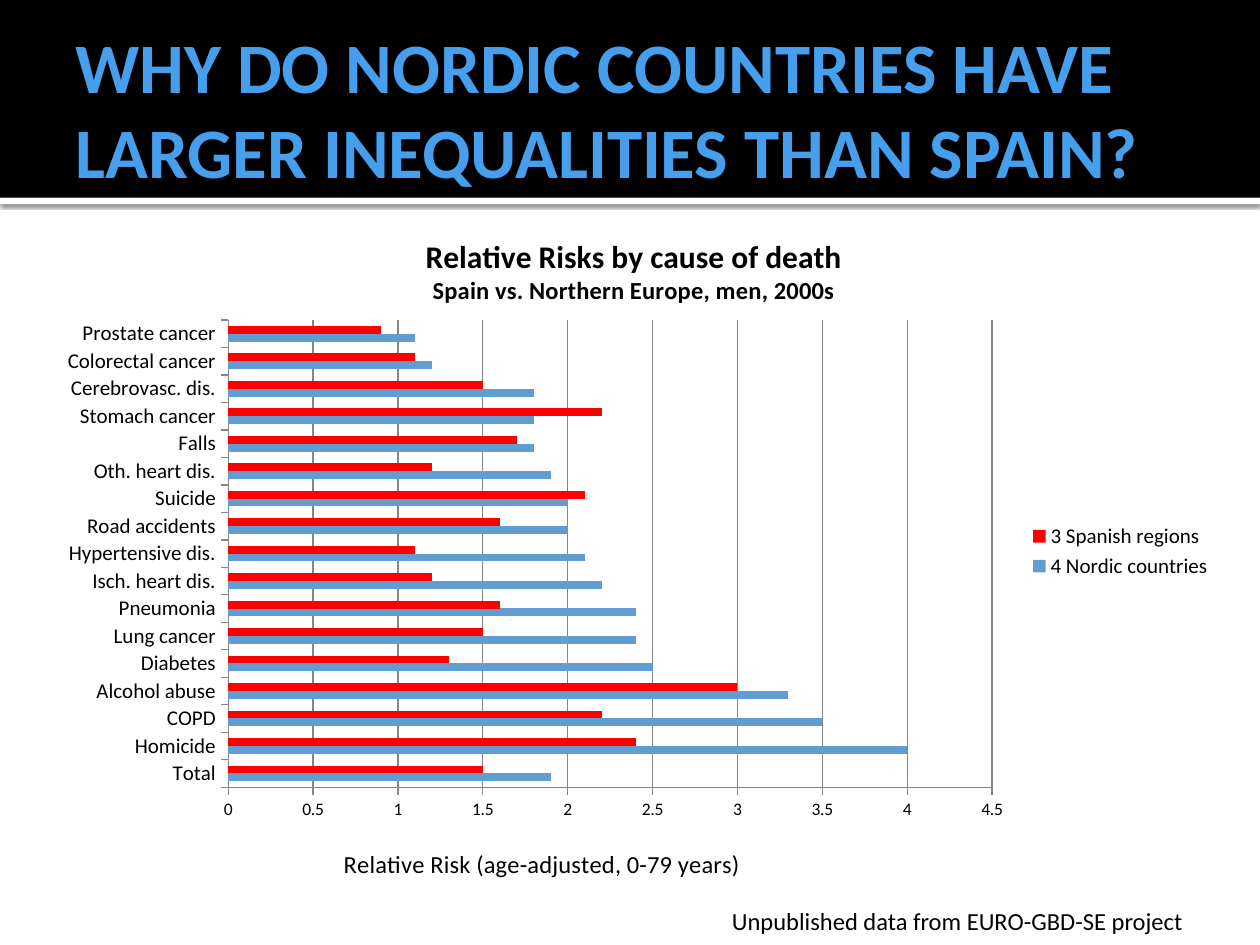
from lxml.etree import SubElement
from pptx import Presentation
from pptx.chart.data import CategoryChartData
from pptx.dml.color import RGBColor
from pptx.enum.chart import XL_CHART_TYPE, XL_LEGEND_POSITION, XL_TICK_MARK
from pptx.enum.shapes import MSO_SHAPE
from pptx.enum.text import MSO_ANCHOR
from pptx.oxml import parse_xml
from pptx.oxml.ns import nsdecls, qn
from pptx.util import Inches, Pt

color = RGBColor.from_string

presentation = Presentation()
presentation.slide_width, presentation.slide_height = Inches(10), Inches(7.5)
slide = presentation.slides.add_slide(presentation.slide_layouts[6])

# Grid of 100 columns by 75 rows
COLUMN = presentation.slide_width / 100
ROW = presentation.slide_height / 75


def place(left, top, width, height):
    return int(left * COLUMN), int(top * ROW), int(width * COLUMN), int(height * ROW)


def set_layout(element, index, **shares):
    """Pin a chart part at shares of the chart's size."""
    for old in element.findall(qn("c:layout")):
        element.remove(old)
    layout = parse_xml(f"<c:layout {nsdecls('c')}><c:manualLayout/></c:layout>")
    for name, value in shares.items():
        SubElement(layout[0], qn(f"c:{name}")).set("val", str(value))
    element.insert(index, layout)


# Header band and the white strip that casts a shadow under it
for top, height, fill in ((15.7, 0.5, "FFFFFF"), (0, 15.7, "000000")):
    band = slide.shapes.add_shape(MSO_SHAPE.RECTANGLE, *place(0, top, 100, height))
    band.shadow.inherit = False
    band.fill.solid()
    band.fill.fore_color.rgb = color(fill)
    band.line.fill.background()
    if fill == "FFFFFF":
        effects = band._element.spPr.find(qn("a:effectLst"))
        effects.append(parse_xml(
            f'<a:outerShdw {nsdecls("a")} blurRad="{Pt(2.5)}" dist="{Pt(0.8)}" dir="5400000">'
            '<a:srgbClr val="000000"><a:alpha val="60000"/></a:srgbClr></a:outerShdw>'))

# Title and source note
texts = (
    ("WHY DO NORDIC COUNTRIES HAVE LARGER INEQUALITIES THAN SPAIN?",
     (5, 1.7, 90, 13.7), 40.5, "469FED", True, MSO_ANCHOR.MIDDLE, 0.05),
    ("Unpublished data from EURO-GBD-SE project",
     (57.1, 71.4, 37.8, 3.4), 14, "000000", False, MSO_ANCHOR.TOP, 0.1),
)
for text, box, size, font_color, bold, anchor, right_margin in texts:
    text_frame = slide.shapes.add_textbox(*place(*box)).text_frame
    text_frame.word_wrap = True
    text_frame.vertical_anchor = anchor
    text_frame.margin_right = Inches(right_margin)
    text_frame.text = text
    font = text_frame.paragraphs[0].runs[0].font
    font.name, font.size, font.bold = "Calibri", Pt(size), bold
    font.color.rgb = color(font_color)

# Relative risk by cause: Nordic countries, Spanish regions
risks = (
    ("Total", 1.9, 1.5),
    ("Homicide", 4, 2.4),
    ("COPD", 3.5, 2.2),
    ("Alcohol abuse", 3.3, 3),
    ("Diabetes", 2.5, 1.3),
    ("Lung cancer", 2.4, 1.5),
    ("Pneumonia", 2.4, 1.6),
    ("Isch. heart dis.", 2.2, 1.2),
    ("Hypertensive dis.", 2.1, 1.1),
    ("Road accidents", 2, 1.6),
    ("Suicide", 2, 2.1),
    ("Oth. heart dis.", 1.9, 1.2),
    ("Falls", 1.8, 1.7),
    ("Stomach cancer", 1.8, 2.2),
    ("Cerebrovasc. dis.", 1.8, 1.5),
    ("Colorectal cancer", 1.2, 1.1),
    ("Prostate cancer", 1.1, 0.9),
)
causes, nordic, spanish = zip(*risks)
chart_data = CategoryChartData()
chart_data.categories = causes
chart_data.add_series("4 Nordic countries", nordic)
chart_data.add_series("3 Spanish regions", spanish)
chart = slide.shapes.add_chart(
    XL_CHART_TYPE.BAR_CLUSTERED, *place(3.5, 16.2, 93.7, 55.1), chart_data).chart
chart.font.name, chart.font.size = "Calibri", Pt(10)
chart.font.color.rgb = color("000000")

# Bars
plot = chart.plots[0]
plot.gap_width, plot.overlap, plot.vary_by_categories = 75, 0, False
plot.gap_width = 150
for series, fill in zip(plot.series, ("629DD1", "FF0000")):
    series.format.fill.solid()
    series.format.fill.fore_color.rgb = color(fill)

# Axes and gridlines
category_axis, value_axis = chart.category_axis, chart.value_axis
value_axis.minimum_scale, value_axis.maximum_scale, value_axis.major_unit = 0, 4.5, 0.5
value_axis.has_major_gridlines = True
for axis, size in ((category_axis, 12), (value_axis, 10)):
    axis.major_tick_mark = XL_TICK_MARK.OUTSIDE
    axis.tick_labels.font.size = Pt(size)
for part in (category_axis, value_axis, value_axis.major_gridlines):
    part.format.line.color.rgb = color("868686")
    part.format.line.width = Pt(0.75)

# Chart title and axis title
chart.has_title = True
chart_title, axis_title = chart.chart_title, value_axis.axis_title
chart_title.text_frame.text = "Relative Risks by cause of death"
subtitle = chart_title.text_frame.add_paragraph()
subtitle.text = "Spain vs. Northern Europe, men, 2000s"
axis_title.text_frame.text = "Relative Risk (age-adjusted, 0-79 years)"
titles = (
    (chart_title.text_frame.paragraphs[0], 18, True),
    (subtitle, 14, True),
    (axis_title.text_frame.paragraphs[0], 14, False),
)
for paragraph, size, bold in titles:
    font = paragraph.runs[0].font
    font.name, font.size, font.bold = "Calibri", Pt(size), bold
    font.color.rgb = color("000000")

# Legend
chart.has_legend = True
chart.legend.position = XL_LEGEND_POSITION.RIGHT
chart.legend.include_in_layout = False
chart.legend.font.size = Pt(12)

# Places inside the chart
set_layout(chart_title._element, 1, xMode="edge", yMode="edge", x=0.32, y=0.04)
set_layout(axis_title._element, 1, xMode="edge", yMode="edge", x=0.25, y=0.92)
plot_area = chart._chartSpace.chart.plotArea
set_layout(plot_area, 0, layoutTarget="inner", xMode="edge", yMode="edge",
           x=0.156, y=0.167, w=0.647, h=0.673)

presentation.save("out.pptx")
